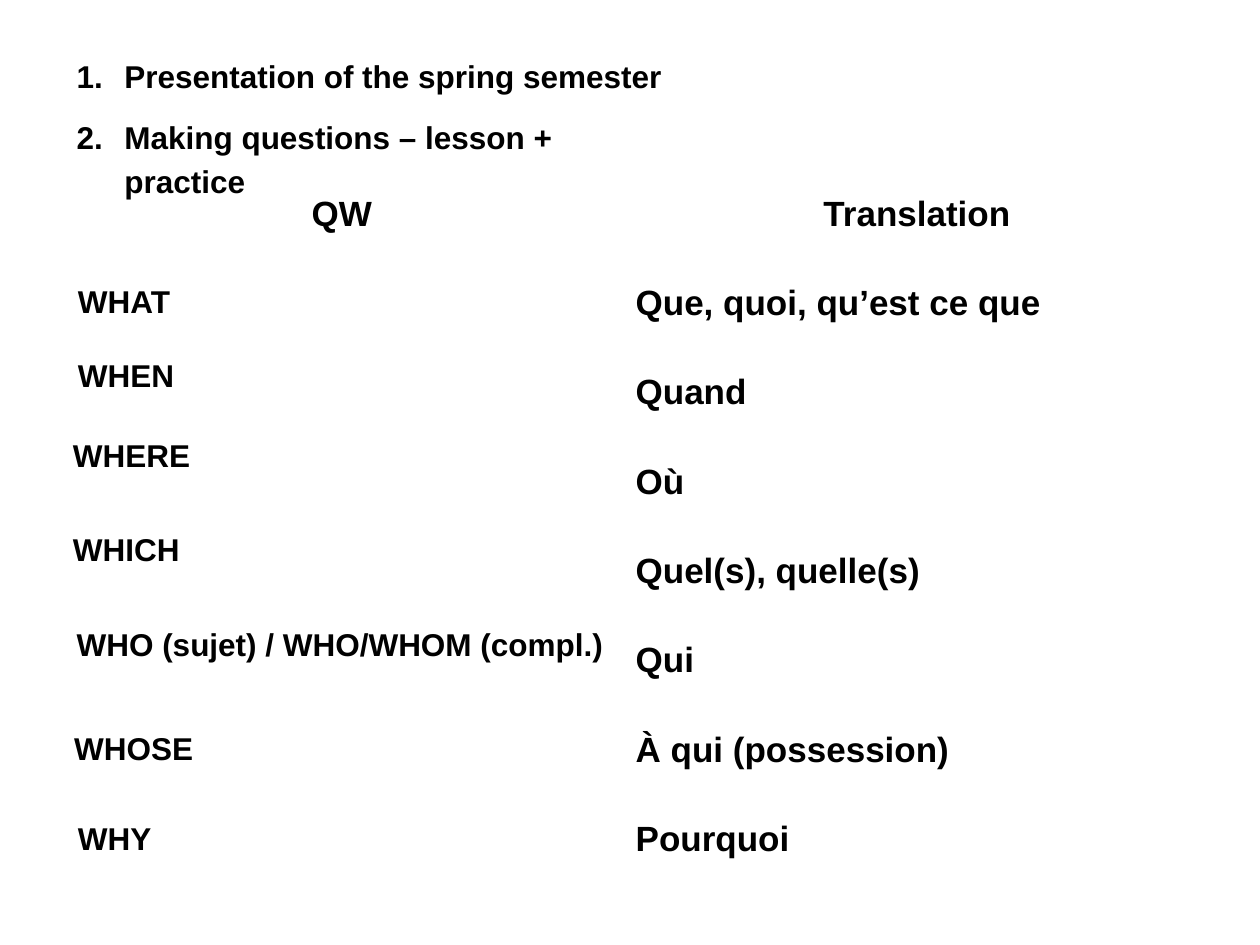
from dataclasses import dataclass

from lxml.etree import SubElement
from pptx import Presentation
from pptx.dml.color import RGBColor
from pptx.enum.text import MSO_ANCHOR, MSO_AUTO_SIZE, PP_ALIGN
from pptx.oxml.ns import qn
from pptx.util import Inches, Pt


@dataclass(frozen=True)
class Theme:
    """Colours and type sizes of the slide."""
    font: str = "Arial"
    ink: str = "000000"
    border: str = "FFFFFF"
    table_size: int = 20
    label_size: int = 18
    thin: int = 1
    thick: int = 3


THEME = Theme()
AGENDA = ["Presentation of the spring semester", "Making questions – lesson + practice"]
HEADINGS = ["QW", "Translation"]
TRANSLATIONS = ["Que, quoi, qu’est ce que", "Quand", "Où", "Quel(s), quelle(s)",
                "Qui", "À qui (possession)", "Pourquoi"]
QUESTION_WORDS = [
    ("WHAT", 0.52, 2.19, 2.68),
    ("WHEN", 0.52, 2.78, 2.68),
    ("WHERE", 0.48, 3.41, 2.68),
    ("WHICH", 0.48, 4.16, 2.68),
    ("WHO (sujet) / WHO/WHOM (compl.)", 0.51, 4.91, 4.49),
    ("WHOSE", 0.49, 5.74, 2.68),
    ("WHY", 0.52, 6.45, 2.68),
]


def add_bold_run(paragraph, wording, size):
    """Add one bold run in the theme's font and ink."""
    run = paragraph.add_run()
    run.text = wording
    run.font.name = THEME.font
    run.font.size = Pt(size)
    run.font.bold = True
    run.font.color.rgb = RGBColor.from_string(THEME.ink)


def set_indent(paragraph, left, first=0):
    """Set the left margin and first-line indent of a paragraph."""
    properties = paragraph._p.get_or_add_pPr()
    properties.set("marL", str(Inches(left)))
    properties.set("indent", str(Inches(first)))


def add_text_frame(slide, left, top, width, height):
    """Add a wrapping text box and return its frame."""
    box = slide.shapes.add_textbox(Inches(left), Inches(top), Inches(width), Inches(height))
    frame = box.text_frame
    frame.word_wrap = True
    frame.auto_size = MSO_AUTO_SIZE.SHAPE_TO_FIT_TEXT
    return frame


def add_agenda(slide):
    """Add the numbered lesson plan."""
    frame = add_text_frame(slide, 0.51, 0.36, 5, 0.92)
    for index, topic in enumerate(AGENDA):
        entry = frame.add_paragraph() if index else frame.paragraphs[0]
        set_indent(entry, 0.38, -0.38)
        entry.line_spacing = 1.15
        entry.space_after = Pt(10)
        SubElement(entry._p.get_or_add_pPr(), qn("a:buFont"), typeface="+mj-lt")
        SubElement(entry._p.get_or_add_pPr(), qn("a:buAutoNum"), type="arabicPeriod")
        add_bold_run(entry, topic, THEME.label_size)


def add_question_word(slide, word, left, top, width):
    """Add one question word beside its translation."""
    frame = add_text_frame(slide, left, top, width, 0.4)
    add_bold_run(frame.paragraphs[0], word, THEME.label_size)


def style_cell(cell, top_border, bottom_border):
    """Clear the fill and margins of a cell and draw its borders."""
    cell.margin_left = cell.margin_right = cell.margin_top = cell.margin_bottom = 0
    cell.vertical_anchor = MSO_ANCHOR.TOP
    widths = {"L": THEME.thin, "R": THEME.thin, "T": top_border, "B": bottom_border}
    for side, width in widths.items():
        line = SubElement(cell._tc.get_or_add_tcPr(), qn(f"a:ln{side}"), w=str(Pt(width)))
        SubElement(SubElement(line, qn("a:solidFill")), qn("a:srgbClr"), val=THEME.border)
    cell.fill.background()


def write_cell(cell, wording, is_heading):
    """Write a centred heading or a left-aligned translation."""
    paragraph = cell.text_frame.paragraphs[0]
    paragraph.line_spacing = 1.5
    if is_heading:
        paragraph.alignment = PP_ALIGN.CENTER
    else:
        set_indent(paragraph, 0.05)
    add_bold_run(paragraph, wording, THEME.table_size)


def add_translation_table(slide):
    """Add the table of question words and translations."""
    content = [HEADINGS] + [["", translation] for translation in TRANSLATIONS]
    last = len(content) - 1
    table = slide.shapes.add_table(len(content), len(HEADINGS), Inches(0.43), Inches(1.39),
                                   Inches(9.13), Inches(5.67)).table
    table.first_row = table.horz_banding = False
    for row, wordings in enumerate(content):
        top_border = THEME.thick if row in (1, last) else THEME.thin
        bottom_border = THEME.thick if row in (0, last - 1) else THEME.thin
        for column, wording in enumerate(wordings):
            cell = table.cell(row, column)
            style_cell(cell, top_border, bottom_border)
            if wording:
                write_cell(cell, wording, row == 0)


def main():
    """Build and save the slide."""
    deck = Presentation()
    deck.slide_width, deck.slide_height = Inches(10), Inches(7.5)
    slide = deck.slides.add_slide(deck.slide_layouts[6])
    add_translation_table(slide)
    add_agenda(slide)
    for question_word in QUESTION_WORDS:
        add_question_word(slide, *question_word)
    deck.save("out.pptx")


if __name__ == "__main__":
    main()
